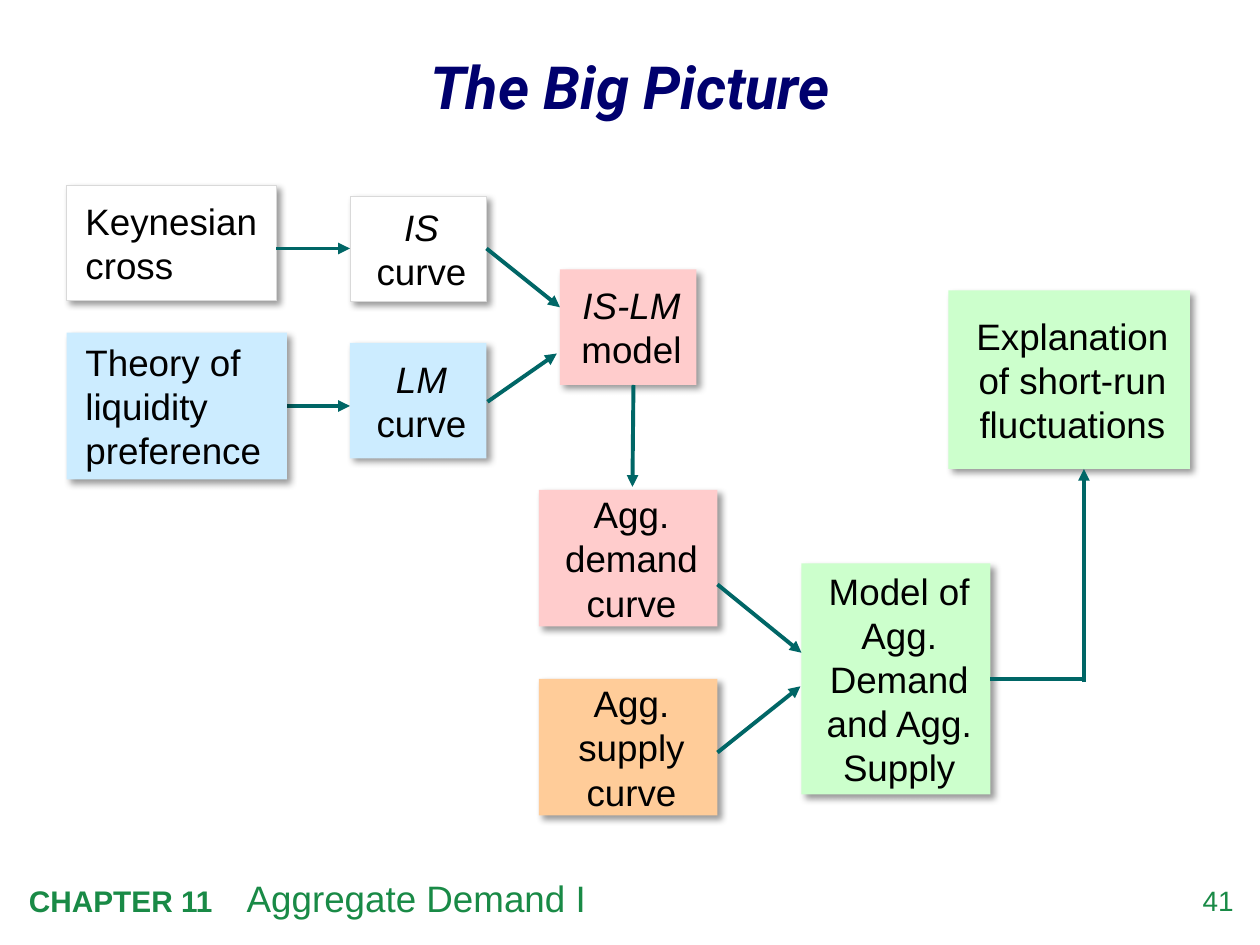
import pptx
import pptx.util
import pptx.dml.color
import pptx.enum.shapes
import pptx.enum.text
import pptx.oxml
from lxml import etree

# Theme
THEME = {
    "navy": "00006E", "green": "198A46", "teal": "006666", "ink": "000000",
    "white": "FFFFFF", "edge": "D9D9D9", "blue": "CCECFF", "pink": "FFCCCC",
    "orange": "FFCC99", "mint": "CCFFCC",
    "head": 34, "body": 21, "label": 17, "page": 16,
    "font": "Arial", "title": "Roboto",
}

# Content: runs are (text, style), style being "", "i", "b" or "bi"
TITLE = [("The Big Picture", "bi")]
CHAPTER = [("CHAPTER 11\t", "b"), ("Aggregate Demand I", "")]
PAGE = [("41", "")]

# Boxes: runs, fill, alignment, (column, row, columns wide, rows high)
BOXES = [
    ([("Keynesian\ncross", "")], "white", "LEFT", (6, 18, 20, 11)),
    ([("Theory of liquidity preference", "")], "blue", "LEFT", (6, 32, 21, 14)),
    ([("IS\n", "i"), ("curve", "")], "white", "CENTER", (33, 19, 13, 10)),
    ([("LM", "i"), (" curve", "")], "blue", "CENTER", (33, 33, 13, 11)),
    ([("IS-LM\n", "i"), ("model", "")], "pink", "CENTER", (53, 26, 13, 11)),
    ([("Agg. demand\ncurve", "")], "pink", "CENTER", (51, 47, 17, 13)),
    ([("Agg. supply\ncurve", "")], "orange", "CENTER", (51, 65, 17, 13)),
    ([("Model of Agg. Demand and Agg. Supply", "")], "mint", "CENTER",
     (76, 54, 18, 22)),
    ([("Explanation of short-run fluctuations", "")], "mint", "CENTER",
     (90, 28, 23, 17)),
]

# Links: start, end, arrowhead; the first lies behind the boxes
BACK = [((26, 39), (33, 39), True)]
FRONT = [
    ((26, 24), (33, 24), True),
    ((46, 24), (53, 29.6), True),
    ((46.1, 38.6), (52.7, 34), True),
    ((60, 37), (59.9, 46.7), True),
    ((68, 56), (76, 62.5), True),
    ((68, 72), (75.9, 65.7), True),
    ((94, 65), (103.1, 65), False),
    ((102.9, 65.3), (102.9, 45), True),
]

# Slide and grid: 120 columns by 90 rows, shifted by a third of a cell
deck = pptx.Presentation()
deck.slide_width = pptx.util.Inches(10)
deck.slide_height = pptx.util.Inches(7.5)
slide = deck.slides.add_slide(deck.slide_layouts[5])
CELL = deck.slide_width / 120
SHIFT = 1 / 3


def spot(col, row):
    return int((col + SHIFT) * CELL), int((row - SHIFT) * CELL)


def share(left, top, wide, high):
    """Turn shares of the slide into a place and a size."""
    w, h = deck.slide_width, deck.slide_height
    return int(left * w), int(top * h), int(wide * w), int(high * h)


def color(name):
    return pptx.dml.color.RGBColor.from_string(THEME[name])


def write(shape, runs, sizes=("body",), ink="ink", font="font", align="LEFT",
          anchor="TOP", pad=(0.1, 0.05, 0.1, 0.05), lead=None, before=0):
    """Fill a shape with runs; sizes are taken in turn, the last one repeats."""
    frame = shape.text_frame
    frame.word_wrap = True
    frame.auto_size = pptx.enum.text.MSO_AUTO_SIZE.NONE
    frame.vertical_anchor = getattr(pptx.enum.text.MSO_ANCHOR, anchor)
    (frame.margin_left, frame.margin_top, frame.margin_right,
     frame.margin_bottom) = [pptx.util.Inches(p) for p in pad]
    para = frame.paragraphs[0]
    para.alignment = getattr(pptx.enum.text.PP_ALIGN, align)
    para.space_before = pptx.util.Pt(before)
    if lead:
        para.line_spacing = lead
    for i, (text, style) in enumerate(runs):
        for j, line in enumerate(text.split("\n")):
            if j:
                para.add_line_break()
            if not line:
                continue
            run = para.add_run()
            run.text = line
            run.font.name = THEME[font]
            run.font.size = pptx.util.Pt(THEME[sizes[min(i, len(sizes) - 1)]])
            run.font.color.rgb = color(ink)
            run.font.bold = "b" in style
            run.font.italic = "i" in style
    return para


def node(parent, tag, **attrs):
    return etree.SubElement(parent, pptx.oxml.ns.qn(tag), attrs)


def link(start, end, head):
    line = slide.shapes.add_connector(
        pptx.enum.shapes.MSO_CONNECTOR.STRAIGHT, *spot(*start), *spot(*end))
    line.line.color.rgb = color("teal")
    line.line.width = pptx.util.Pt(2.25)
    if head:
        node(line.line._get_or_add_ln(), "a:tailEnd", type="triangle")
    node(line._element.spPr, "a:effectLst")


def box(runs, fill, align, cells):
    col, row, wide, high = cells
    rect = slide.shapes.add_shape(
        pptx.enum.shapes.MSO_SHAPE.RECTANGLE, *spot(col, row),
        int(wide * CELL), int(high * CELL))
    rect.fill.solid()
    rect.fill.fore_color.rgb = color(fill)
    if fill == "white":
        rect.line.color.rgb = color("edge")
        rect.line.width = pptx.util.Pt(0.5)
    else:
        rect.line.fill.background()
    # Soft shadow to the lower right
    rect.shadow.inherit = False
    effect = rect._element.spPr.find(pptx.oxml.ns.qn("a:effectLst"))
    cast = node(effect, "a:outerShdw", blurRad=str(pptx.util.Pt(4)),
                dist=str(pptx.util.Pt(3)), dir=str(45 * 60000),
                algn="tl", rotWithShape="0")
    tone = node(cast, "a:srgbClr", val=THEME["ink"])
    node(tone, "a:alpha", val="40000")
    write(rect, runs, align=align, anchor="MIDDLE",
          pad=(0.15, 0.05, 0.1, 0.05), before=4)


# Footer
page = slide.shapes.add_textbox(*share(0.924, 0.935, 0.055, 0.043))
write(page, PAGE, sizes=("page",), ink="green", align="RIGHT", pad=(0,) * 4)
foot = slide.shapes.add_textbox(*share(0.013, 0.92, 0.818, 0.06))
para = write(foot, CHAPTER, sizes=("label", "body"), ink="green")
tabs = node(para._p.get_or_add_pPr(), "a:tabLst")
node(tabs, "a:tab", pos=str(pptx.util.Inches(1.73)), algn="l")

# Title
title = slide.shapes.title
title.left, title.top, title.width, title.height = share(0, 0.021, 1, 0.147)
write(title, TITLE, sizes=("head",), ink="navy", font="title",
      align="CENTER", anchor="MIDDLE", pad=(0,) * 4, lead=0.95)

# Diagram
for item in BACK:
    link(*item)
for item in BOXES:
    box(*item)
for item in FRONT:
    link(*item)

deck.save("out.pptx")
